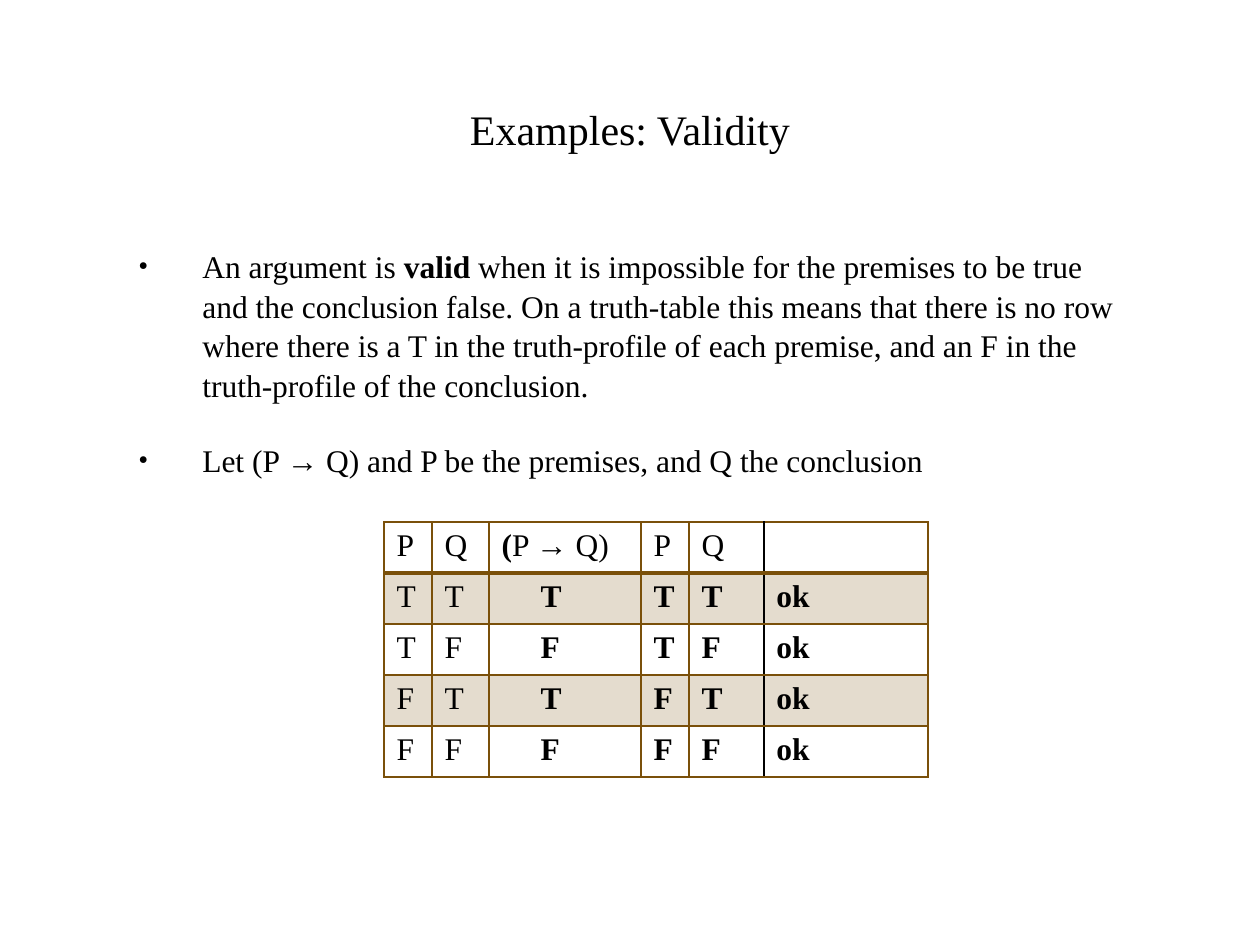
from lxml.etree import SubElement
from pptx import Presentation
from pptx.dml.color import RGBColor
from pptx.enum.text import MSO_ANCHOR, PP_ALIGN
from pptx.oxml import parse_xml
from pptx.oxml.ns import nsdecls, qn
from pptx.util import Pt

PX = 914400 / 126  # EMU in one px
BLACK = RGBColor(0x00, 0x00, 0x00)
BROWN = RGBColor(0x7A, 0x50, 0x0A)
FONT = "Times New Roman"

BULLETS = [
    [("An argument is ", False), ("valid", True),
     (" when it is impossible for the premises to be true and the conclusion "
      "false. On a truth-table this means that there is no row where there is "
      "a T in the truth-profile of each premise, and an F in the truth-profile "
      "of the conclusion.", False)],
    [("Let (P → Q) and P be the premises, and Q the conclusion", False)],
]
HEADER = [
    [("P", False)], [("Q", False)],
    [("(", True), ("P ", False), ("→ ", True), ("Q)", False)],
    [("P", False)], [("Q", False)], [],
]
TRUTH_ROWS = ["TTTTT", "TFFTF", "FTTFT", "FFFFF"]
COLS = [48, 57, 152, 48, 75, 164]
ROW_H = 51
CONDITIONAL, CONCLUSION, VERDICT = 2, 4, 5  # column numbers


def px(n):
    return round(n * PX)


def add_runs(p, runs, size=18):
    for text, bold in runs:
        r = p.add_run()
        r.text = text
        style = {"name": FONT, "size": Pt(size), "bold": bold}
        for key, value in style.items():
            setattr(r.font, key, value)
        r.font.color.rgb = BLACK


def place_title(slide, x, y, w, h):
    sp = slide.shapes.title
    sp.left, sp.top, sp.width, sp.height = map(px, (x, y, w, h))
    sp.text_frame.vertical_anchor = MSO_ANCHOR.MIDDLE
    p = sp.text_frame.paragraphs[0]
    p.alignment = PP_ALIGN.CENTER
    add_runs(p, [("Examples: Validity", False)], 24)


def add_bullets(slide, x, y, w, h):
    tf = slide.shapes.add_textbox(*map(px, (x, y, w, h))).text_frame
    tf.word_wrap = True
    for i, runs in enumerate(BULLETS):
        p = tf.add_paragraph() if i else tf.paragraphs[0]
        pPr = p._p.get_or_add_pPr()
        pPr.set("marL", str(px(64)))
        pPr.set("indent", str(px(-64)))
        SubElement(pPr, qn("a:buSzPct")).set("val", "90000")
        SubElement(pPr, qn("a:buFont")).set("typeface", FONT)
        SubElement(pPr, qn("a:buChar")).set("char", "•")
        p.line_spacing = 1.05
        p.space_before = Pt(20 if i else 0)
        add_runs(p, runs)


def set_borders(cell, borders):
    tcPr = cell._tc.get_or_add_tcPr()
    for i, (side, (color, width)) in enumerate(borders.items()):
        tcPr.insert(i, parse_xml(
            f'<a:ln{side} {nsdecls("a")} w="{Pt(width)}"><a:solidFill>'
            f'<a:srgbClr val="{color}"/></a:solidFill></a:ln{side}>'))


def shade(cell):
    cell.fill.solid()
    cell.fill.fore_color.rgb = BROWN
    clr = cell._tc.tcPr.find(".//" + qn("a:srgbClr"))
    SubElement(clr, qn("a:alpha")).set("val", "20000")


def add_truth_table(slide, x, y):
    body = [[[(value, col >= CONDITIONAL)] for col, value in enumerate(row)]
            + [[("ok", True)]] for row in TRUTH_ROWS]
    rows = [HEADER] + body
    box = (x, y, sum(COLS), ROW_H * len(rows))
    table = slide.shapes.add_table(len(rows), len(COLS), *map(px, box)).table
    table.first_row = table.horz_banding = False
    for column, width in zip(table.columns, COLS):
        column.width = px(width)

    for i, row in enumerate(rows):
        table.rows[i].height = px(ROW_H)
        for j, runs in enumerate(row):
            cell = table.cell(i, j)
            p = cell.text_frame.paragraphs[0]
            add_runs(p, runs)
            if i and j == CONDITIONAL:
                p._p.get_or_add_pPr().set("marL", str(px(39)))
            # Every second row is tinted
            if i % 2:
                shade(cell)
            else:
                cell.fill.background()
            # Black rule before the verdict, thick rule under the header
            set_borders(cell, {
                "L": (BLACK if j == VERDICT else BROWN, 1),
                "R": (BLACK if j == CONCLUSION else BROWN, 1),
                "T": (BROWN, 2 if i == 1 else 1),
                "B": (BROWN, 2 if i == 0 else 1),
            })


def main():
    prs = Presentation()
    prs.slide_width, prs.slide_height = px(1260), px(945)
    slide = prs.slides.add_slide(prs.slide_layouts[5])
    place_title(slide, 126, 69, 1008, 120)
    add_bullets(slide, 126, 239, 1008, 559)
    add_truth_table(slide, 384, 522)
    prs.save("out.pptx")


if __name__ == "__main__":
    main()
